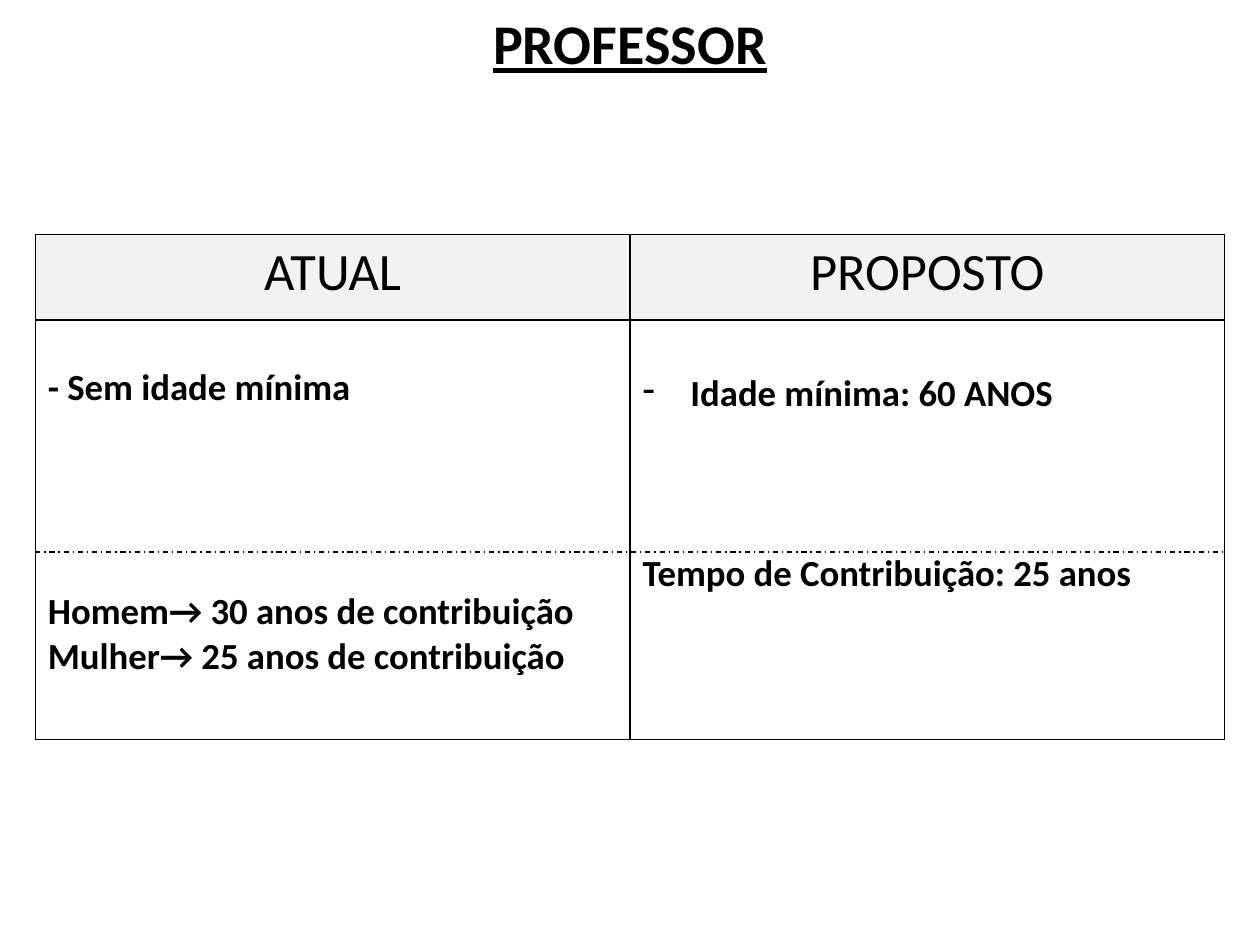
from dataclasses import dataclass

from lxml import etree
from pptx import Presentation, util as u
from pptx.dml.color import RGBColor
from pptx.enum import dml, shapes, text
from pptx.oxml.ns import qn

BLACK = RGBColor(0x00, 0x00, 0x00)
WHITE = RGBColor(0xFF, 0xFF, 0xFF)
HEADER_GRAY = RGBColor(0xF2, 0xF2, 0xF2)
FONT = "Calibri"
TABLE_LEFT, TABLE_TOP, COLUMN_WIDTH = 0.28, 1.86, 4.72
ROW_HEIGHTS = (0.68, 3.33)
DIVIDER_TOP = 4.38


@dataclass(frozen=True)
class Line:
    wording: str
    size: float = 21
    bold: bool = True
    underline: bool = False
    centered: bool = False
    space_before: float = 0
    dash: bool = False


@dataclass(frozen=True)
class CellContent:
    lines: tuple[Line, ...]
    fill: RGBColor = WHITE
    margin_top: float = 0.05


TITLE = Line("PROFESSOR", size=32, underline=True, centered=True)
ROWS = (
    tuple(
        CellContent((Line(name, size=30, bold=False, centered=True),), HEADER_GRAY)
        for name in ("ATUAL", "PROPOSTO")
    ),
    (
        CellContent((
            Line("- Sem idade mínima"),
            Line("Homem→ 30 anos de contribuição", space_before=102.5),
            Line("Mulher→ 25 anos de contribuição"),
        ), margin_top=0.36),
        CellContent((
            Line("Idade mínima: 60 ANOS", dash=True),
            Line("Tempo de Contribuição: 25 anos", space_before=77),
        ), margin_top=0.41),
    ),
)


def add_dash_bullet(para) -> None:
    properties = para._p.get_or_add_pPr()
    indent = u.Inches(0.38)
    properties.set("marL", str(indent))
    properties.set("indent", str(-indent))
    etree.SubElement(properties, qn("a:buFontTx"))
    etree.SubElement(properties, qn("a:buChar"), char="-")


def write_lines(frame, lines: tuple[Line, ...]) -> None:
    frame.text = "\n".join(line.wording for line in lines)
    for para, line in zip(frame.paragraphs, lines):
        para.alignment = text.PP_ALIGN.CENTER if line.centered else text.PP_ALIGN.LEFT
        para.space_before = u.Pt(line.space_before)
        if line.dash:
            add_dash_bullet(para)
        for span in para.runs:
            span.font.name = FONT
            span.font.size = u.Pt(line.size)
            span.font.bold = line.bold
            span.font.underline = line.underline
            span.font.color.rgb = BLACK


def add_borders(cell) -> None:
    """Put a thin black line on all four sides, ahead of the cell's fill."""
    properties = cell._tc.get_or_add_tcPr()
    for position, side in enumerate(("lnL", "lnR", "lnT", "lnB")):
        border = etree.Element(qn(f"a:{side}"), w=str(u.Pt(1)))
        solid = etree.SubElement(border, qn("a:solidFill"))
        etree.SubElement(solid, qn("a:srgbClr"), val=str(BLACK))
        properties.insert(position, border)


def add_title(page) -> None:
    box = page.shapes.add_textbox(0, 0, u.Inches(10), u.Inches(7.37))
    box.text_frame.word_wrap = True
    box.text_frame.margin_top = u.Inches(0.07)
    write_lines(box.text_frame, (TITLE,))


def add_comparison(page) -> None:
    table = page.shapes.add_table(
        len(ROWS), len(ROWS[0]), u.Inches(TABLE_LEFT), u.Inches(TABLE_TOP),
        u.Inches(2 * COLUMN_WIDTH), u.Inches(sum(ROW_HEIGHTS)),
    ).table
    for row, height in zip(table.rows, ROW_HEIGHTS):
        row.height = u.Inches(height)
    for row, contents in zip(table.rows, ROWS):
        for cell, content in zip(row.cells, contents):
            cell.fill.solid()
            cell.fill.fore_color.rgb = content.fill
            cell.margin_top = u.Inches(content.margin_top)
            write_lines(cell.text_frame, content.lines)
            add_borders(cell)


def add_divider(page) -> None:
    divider = page.shapes.add_connector(
        shapes.MSO_CONNECTOR.STRAIGHT,
        u.Inches(TABLE_LEFT), u.Inches(DIVIDER_TOP),
        u.Inches(TABLE_LEFT + 2 * COLUMN_WIDTH), u.Inches(DIVIDER_TOP),
    )
    divider.line.color.rgb = BLACK
    divider.line.width = u.Pt(0.75)
    divider.line.dash_style = dml.MSO_LINE.DASH_DOT
    etree.SubElement(divider._element.spPr, qn("a:effectLst"))


def main() -> None:
    deck = Presentation()
    deck.slide_width, deck.slide_height = u.Inches(10), u.Inches(7.5)
    page = deck.slides.add_slide(deck.slide_layouts[6])
    add_title(page)
    add_comparison(page)
    add_divider(page)
    deck.save("out.pptx")


if __name__ == "__main__":
    main()
